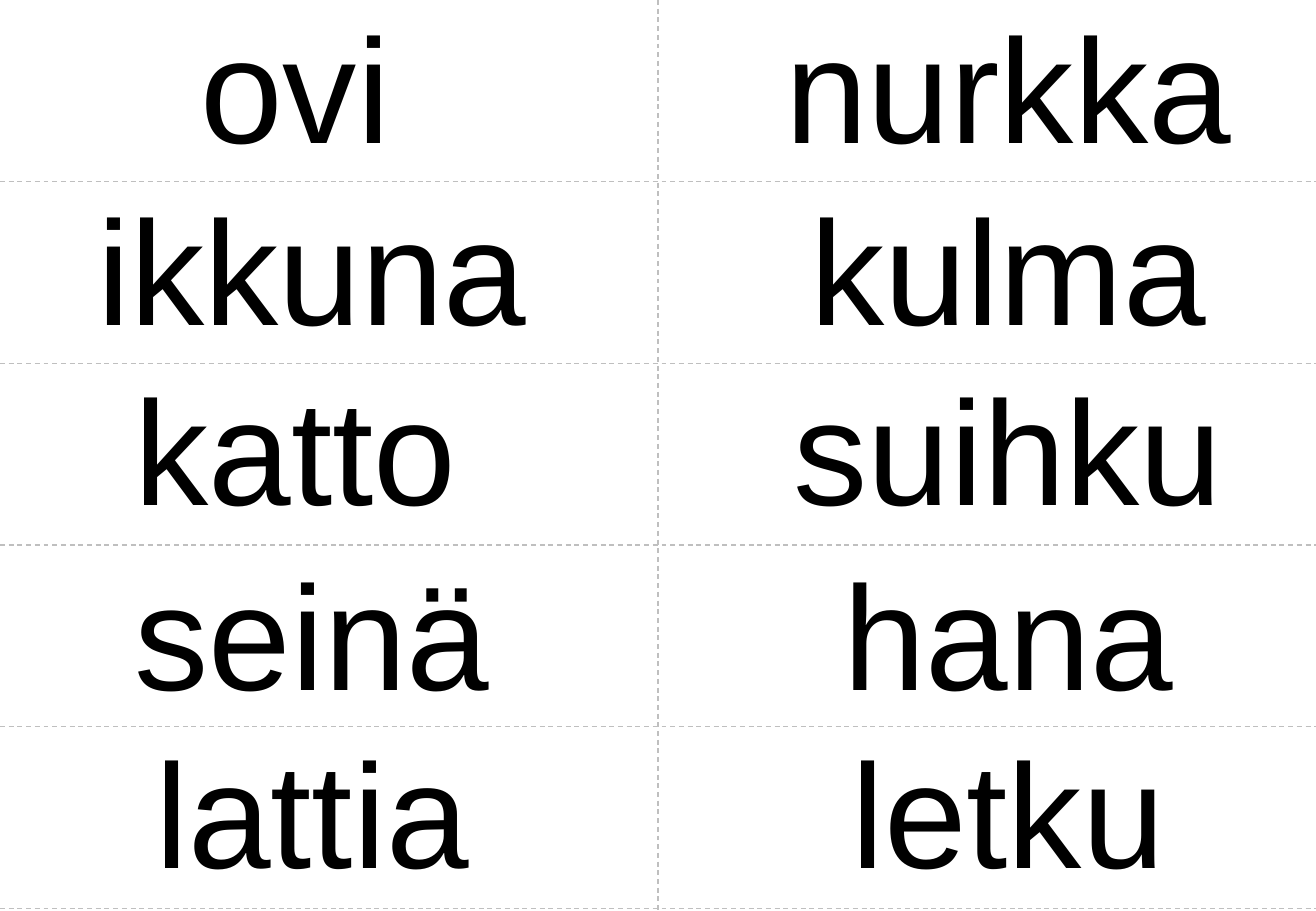
from dataclasses import dataclass

from lxml import etree
from pptx import Presentation
from pptx.dml.color import RGBColor
from pptx.enum import dml, shapes, text
from pptx.oxml.ns import qn
from pptx.util import Pt

WIDTH, HEIGHT = 780, 540
MIDDLE = WIDTH / 2
PITCH = 107.7
CARD_HEIGHT = 106.6
INSET = 3.6
TOPS = (-6.5, 101.5, 208.1, 317.5, 423.4)


@dataclass
class Card:
    word: str
    center: float
    width: float


LEFT = (
    Card("ovi", 175, 121),
    Card("ikkuna", 184.8, 263),
    Card("katto", 175, 199),
    Card("seinä", 185, 219),
    Card("lattia", 185, 194),
)
RIGHT = (
    Card("nurkka", 597.5, 272),
    Card("kulma", 597.5, 243),
    Card("suihku", 597.5, 263),
    Card("hana", 597.5, 204),
    Card("letku", 597.5, 194),
)


def color(code: str) -> RGBColor:
    return RGBColor.from_string(code)


def add_card(slide, card: Card, top: float) -> None:
    box = slide.shapes.add_textbox(
        Pt(card.center - card.width / 2), Pt(top), Pt(card.width), Pt(CARD_HEIGHT))
    frame = box.text_frame
    layout = {
        "margin_left": Pt(INSET), "margin_right": Pt(INSET),
        "margin_top": Pt(INSET), "margin_bottom": Pt(INSET),
        "word_wrap": False, "auto_size": text.MSO_AUTO_SIZE.SHAPE_TO_FIT_TEXT,
    }
    for name, value in layout.items():
        setattr(frame, name, value)
    line = frame.paragraphs[0]
    line.alignment = text.PP_ALIGN.CENTER
    run = line.add_run()
    run.text = card.word
    for name, value in {"name": "Arial", "size": Pt(88)}.items():
        setattr(run.font, name, value)
    run.font.color.rgb = color("000000")


def add_cut(slide, x1: float, y1: float, x2: float, y2: float) -> None:
    """Draw a dashed cutting line."""
    cut = slide.shapes.add_connector(
        shapes.MSO_CONNECTOR.STRAIGHT, Pt(x1), Pt(y1), Pt(x2), Pt(y2))
    cut.line.color.rgb = color("BFBFBF")
    cut.line.width = Pt(0.75)
    cut.line.dash_style = dml.MSO_LINE.DASH
    etree.SubElement(cut._element.spPr, qn("a:effectLst"))


def main() -> None:
    deck = Presentation()
    deck.slide_width, deck.slide_height = Pt(WIDTH), Pt(HEIGHT)
    slide = deck.slides.add_slide(deck.slide_layouts[6])
    for column in (LEFT, RIGHT):
        for card, top in zip(column, TOPS):
            add_card(slide, card, top)
    add_cut(slide, MIDDLE, 0, MIDDLE, HEIGHT)
    for row in range(1, len(TOPS) + 1):
        add_cut(slide, 0, row * PITCH, WIDTH, row * PITCH)
    deck.save("out.pptx")


if __name__ == "__main__":
    main()
